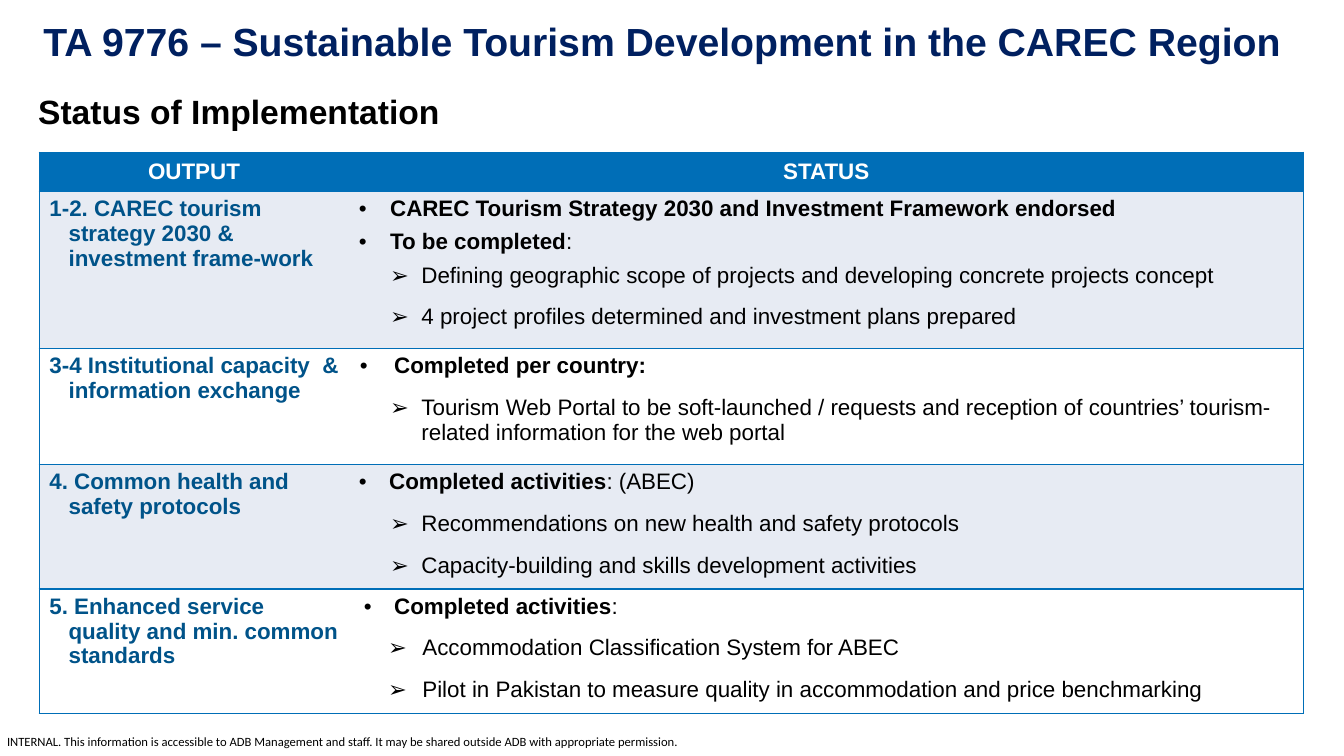
from lxml.etree import SubElement
from pptx import Presentation
from pptx.dml.color import RGBColor as Rgb
from pptx.enum.text import MSO_ANCHOR as Anchor, MSO_AUTO_SIZE as AutoSize, PP_ALIGN as Align
from pptx.oxml import parse_xml
from pptx.oxml.ns import nsdecls, qn
from pptx.util import Inches, Pt

COLORS = {"navy": "002060", "blue": "006EB7", "label": "005389",
          "band": "E7EBF3", "white": "FFFFFF", "black": "000000"}


def add_span(para, text, size, color, bold=True, face="Arial"):
    span = para.add_run()
    span.text = text
    font = span.font
    font.name, font.size, font.bold = face, Pt(size), bold
    font.color.rgb = Rgb.from_string(COLORS[color])


def set_indent(para, left, hanging, mark=None):
    props = para._p.get_or_add_pPr()
    props.set("marL", str(Inches(left)))
    props.set("indent", str(-Inches(hanging)))
    if mark:
        SubElement(props, qn("a:buFont")).set("typeface", "Arial")
        SubElement(props, qn("a:buChar")).set("char", mark)


deck = Presentation()
deck.slide_width, deck.slide_height = Inches(13.33), Inches(7.5)
page = deck.slides.add_slide(deck.slide_layouts[5])

# Title
title = page.shapes.title
title.left, title.top, title.width, title.height = map(Inches, (0.19, 0.12, 12.75, 0.57))
frame = title.text_frame
frame.word_wrap, frame.auto_size = True, AutoSize.NONE
frame.vertical_anchor = Anchor.TOP
para = frame.paragraphs[0]
para.alignment = Align.CENTER
add_span(para, "TA 9776 – Sustainable Tourism Development in the CAREC Region", 28, "navy")

# Subtitle
subtitle = page.shapes.add_textbox(*map(Inches, (0.28, 0.85, 9.11, 0.5)))
subtitle.text_frame.word_wrap = True
add_span(subtitle.text_frame.paragraphs[0], "Status of Implementation", 24, "black")

# Footer
footer = page.shapes.add_textbox(*map(Inches, (0.07, 7.28, 6.9, 0.15)))
frame = footer.text_frame
frame.word_wrap = True
frame.margin_left = frame.margin_right = frame.margin_top = frame.margin_bottom = 0
add_span(frame.paragraphs[0],
         "INTERNAL. This information is accessible to ADB Management and staff. "
         "It may be shared outside ADB with appropriate permission.",
         9, "black", False, "Calibri")

# Table content: output, then heads (bold, plain), head indent and space after,
# then items and item indent
OUTPUTS = [
    ("1-2. CAREC tourism strategy 2030 & investment frame-work",
     [("CAREC Tourism Strategy 2030 and Investment Framework endorsed", ""),
      ("To be completed", ":")], (0.31, 0.31), 6,
     ["Defining geographic scope of projects and developing concrete projects concept",
      "4 project profiles determined and investment plans prepared"], (0.62, 0.31)),
    ("3-4 Institutional capacity  & information exchange",
     [("Completed per country:", "")], (0.35, 0.34), 12,
     ["Tourism Web Portal to be soft-launched / requests and reception of countries’ "
      "tourism-related information for the web portal"], (0.62, 0.31)),
    ("4. Common health and safety protocols",
     [("Completed activities", ": (ABEC)")], (0.3, 0.3), 12,
     ["Recommendations on new health and safety protocols",
      "Capacity-building and skills development activities"], (0.62, 0.31)),
    ("5. Enhanced service quality and min. common standards",
     [("Completed activities", ":")], (0.35, 0.3), 12,
     ["Accommodation Classification System for ABEC",
      "Pilot in Pakistan to measure quality in accommodation and price benchmarking"],
     (0.63, 0.34)),
]
COLUMNS = [3.07, 9.47]
ROWS = [0.39, 1.56, 1.15, 1.18, 1.18]

table = page.shapes.add_table(len(ROWS), len(COLUMNS), Inches(0.39), Inches(1.51),
                              Inches(sum(COLUMNS)), Inches(sum(ROWS))).table
table.first_row = table.horz_banding = False
for column, width in zip(table.columns, COLUMNS):
    column.width = Inches(width)
for row, height in zip(table.rows, ROWS):
    row.height = Inches(height)

# Cell fills and borders, with no line between the columns
for row_number in range(len(ROWS)):
    shade = "blue" if row_number == 0 else "band" if row_number % 2 else "white"
    for column_number, inner_edge in enumerate(("lnR", "lnL")):
        cell = table.cell(row_number, column_number)
        cell.fill.solid()
        cell.fill.fore_color.rgb = Rgb.from_string(COLORS[shade])
        for place, edge in enumerate(("lnL", "lnR", "lnT", "lnB")):
            paint = ("<a:noFill/>" if edge == inner_edge else
                     f'<a:solidFill><a:srgbClr val="{COLORS["blue"]}"/></a:solidFill>')
            cell._tc.get_or_add_tcPr().insert(place, parse_xml(
                f'<a:{edge} {nsdecls("a")} w="{Pt(1)}">{paint}</a:{edge}>'))

# Header row
for column_number, heading in enumerate(("OUTPUT", "STATUS")):
    cell = table.cell(0, column_number)
    cell.vertical_anchor = Anchor.MIDDLE
    para = cell.text_frame.paragraphs[0]
    para.alignment = Align.CENTER
    add_span(para, heading, 16, "white")

# Output rows
for row_number, (output, heads, head_indent, head_gap, items, item_indent) in enumerate(OUTPUTS, 1):
    para = table.cell(row_number, 0).text_frame.paragraphs[0]
    set_indent(para, 0.19, 0.19)
    add_span(para, output, 16, "label")

    lines = [(head, head_indent, "•", head_gap) for head in heads]
    lines += [(("", item), item_indent, "➢", 12) for item in items]
    frame = table.cell(row_number, 1).text_frame
    for number, ((strong, plain), indent, mark, gap) in enumerate(lines):
        para = frame.add_paragraph() if number else frame.paragraphs[0]
        set_indent(para, *indent, mark)
        para.space_after = Pt(gap)
        if strong:
            add_span(para, strong, 16, "black")
        if plain:
            add_span(para, plain, 16, "black", False)

deck.save("out.pptx")
